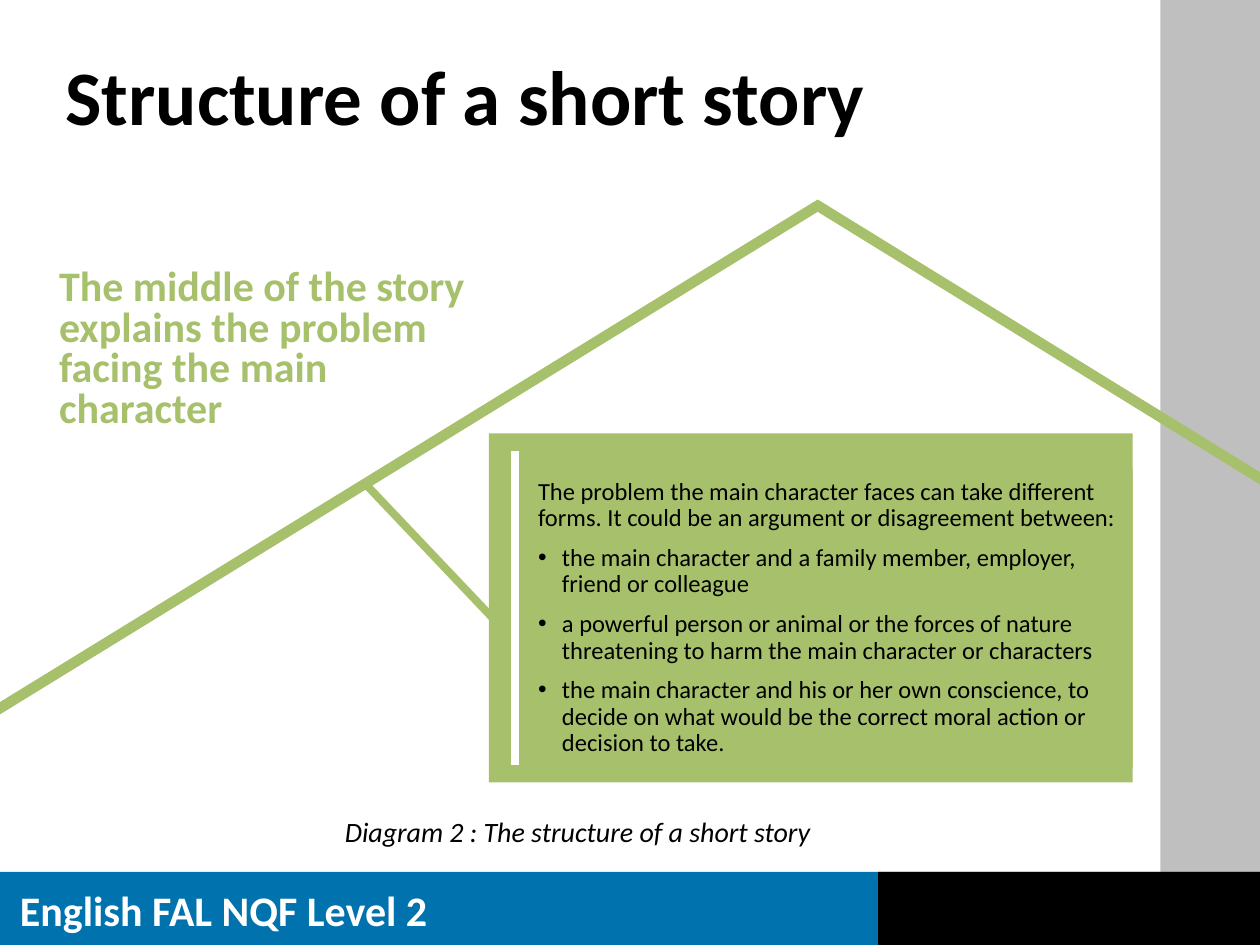
from pptx import Presentation
from pptx.dml.color import RGBColor
from pptx.enum.shapes import MSO_CONNECTOR as CONN, MSO_SHAPE as SHAPE
from pptx.enum.text import MSO_ANCHOR as ANCHOR, MSO_AUTO_SIZE as AUTO, PP_ALIGN as ALIGN
from pptx.oxml.ns import qn
from pptx.util import Pt
from lxml.etree import SubElement

PX = 9144  # EMU per px, 100 px to the inch

THEME = dict(
    font="Calibri",
    green="A7C06B", blue="0072AE", grey="BFBFBF", black="000000", white="FFFFFF",
    title=44, heading=24, caption=16, body=14,
)


def write(sp, paras, size, color="black", bold=False, italic=False, align=ALIGN.LEFT,
          anchor=ANCHOR.MIDDLE, spacing=0.9, before=0, bullets_from=None):
    """Fill a shape with paragraphs; those from index bullets_from on get bullets."""
    tf = sp.text_frame
    tf.word_wrap = True
    tf.auto_size = AUTO.NONE
    tf.vertical_anchor = anchor
    for i, text in enumerate(paras):
        p = tf.paragraphs[0] if i == 0 else tf.add_paragraph()
        p.alignment = align
        p.line_spacing = spacing
        p.space_before = Pt(before if i else 0)
        if bullets_from is not None:
            pPr = p._p.get_or_add_pPr()
            indent = 19 * PX if i >= bullets_from else 0
            pPr.set("marL", str(indent))
            pPr.set("indent", str(-indent))
            if indent:
                SubElement(pPr, qn("a:buFont")).set("typeface", "Arial")
                SubElement(pPr, qn("a:buChar")).set("char", "•")
            else:
                SubElement(pPr, qn("a:buNone"))
        r = p.add_run()
        r.text = text
        r.font.name = THEME["font"]
        r.font.size = Pt(THEME[size])
        r.font.bold = bold
        r.font.italic = italic
        r.font.color.rgb = RGBColor.from_string(THEME[color])


def line(x1, y1, x2, y2, color, width):
    c = s.shapes.add_connector(CONN.STRAIGHT, x1 * PX, y1 * PX, x2 * PX, y2 * PX)
    c.line.color.rgb = RGBColor.from_string(THEME[color])
    c.line.width = Pt(width)
    SubElement(c._element.spPr, qn("a:effectLst"))


prs = Presentation()
prs.slide_width, prs.slide_height = 1000 * PX, 750 * PX
s = prs.slides.add_slide(prs.slide_layouts[1])
title, body = s.placeholders

# Side band, footer bands and the panel behind the list
rects = [
    (921, 0, 79, 749, "grey"),
    (0, 692, 1000, 59, "blue"),
    (697, 692, 303, 58, "black"),
    (388, 344, 511, 277, "green"),
]
for x, y, w, h, color in rects:
    sp = s.shapes.add_shape(SHAPE.RECTANGLE, x * PX, y * PX, w * PX, h * PX)
    sp.shadow.inherit = False
    sp.fill.solid()
    sp.fill.fore_color.rgb = RGBColor.from_string(THEME[color])
    sp.line.fill.background()

# Story arc, link to the panel and the panel's rule
line(1020, 392, 647, 162, "green", 6)
line(-8, 567, 651, 162, "green", 6)
line(400, 500, 288, 382, "green", 4.5)
line(409, 358, 409, 607, "white", 4.5)

# Title
title.left, title.top, title.width, title.height = 42 * PX, 40 * PX, 865 * PX, 79 * PX
write(title, ["Structure of a short story"], "title", bold=True)

# List on the panel, brought in front of it
body.left, body.top, body.width, body.height = 417 * PX, 372 * PX, 482 * PX, 237 * PX
body.fill.solid()
body.fill.fore_color.rgb = RGBColor.from_string(THEME["green"])
s.shapes._spTree.append(body._element)
write(body, [
    "The problem the main character faces can take different forms. "
    "It could be an argument or disagreement between:",
    "the main character and a family member, employer, friend or colleague",
    "a powerful person or animal or the forces of nature threatening to harm "
    "the main character or characters",
    "the main character and his or her own conscience, to decide on what would be "
    "the correct moral action or decision to take.",
], "body", before=7.5, bullets_from=1)

# Heading, caption and footer
texts = [
    ((37, 215, 405, 105),
     ["The middle of the story", "explains the problem", "facing the main", "character"],
     dict(size="heading", color="green", bold=True, anchor=ANCHOR.TOP, spacing=0.6, before=6)),
    ((26, 648, 865, 27), ["Diagram 2 : The structure of a short story"],
     dict(size="caption", italic=True, align=ALIGN.CENTER)),
    ((6, 697, 375, 50), ["English FAL NQF Level 2"],
     dict(size="heading", color="white", bold=True, spacing=1.0)),
]
for box, paras, fmt in texts:
    write(s.shapes.add_textbox(*(v * PX for v in box)), paras, **fmt)

prs.save("out.pptx")
